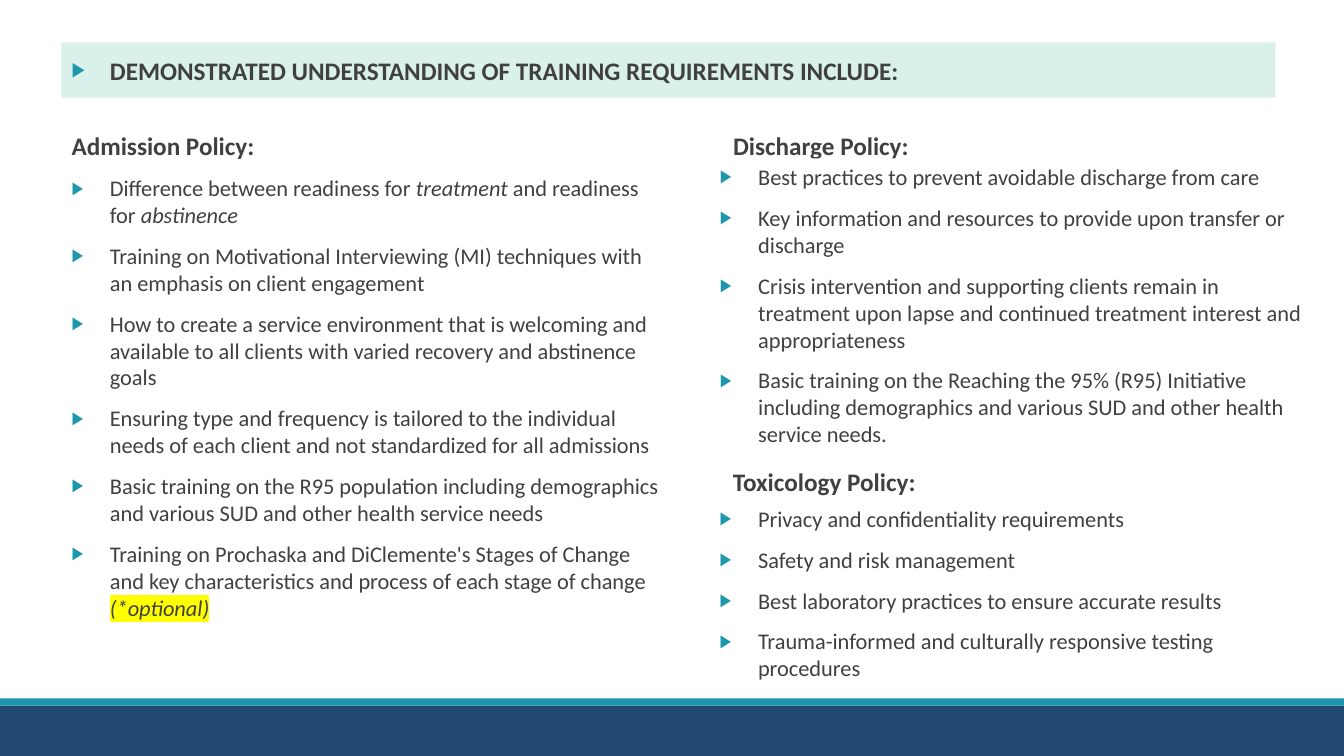
from lxml.etree import SubElement
from pptx import Presentation
from pptx.dml.color import RGBColor
from pptx.enum.shapes import MSO_SHAPE as Preset
from pptx.enum.text import MSO_ANCHOR as Anchor, MSO_AUTO_SIZE as AutoSize, PP_ALIGN as Align
from pptx.oxml.ns import qn
from pptx.util import Inches, Pt

TEXT, TEAL, NAVY, MINT, WHITE, YELLOW = "404040", "1D97AC", "234A70", "D9F1EA", "FFFFFF", "FFFF00"
WIDTH, HEIGHT = 13.33, 7.5
LIST_WIDTH, HEADING_WIDTH, HEADING_HEIGHT = 6.03, 5.74, 0.4

TITLE = "DEMONSTRATED UNDERSTANDING OF TRAINING REQUIREMENTS INCLUDE:"
ADMISSION = [
    [("Difference between readiness for ", ""), ("treatment ", "italic"),
     ("and readiness for ", ""), ("abstinence", "italic")],
    "Training on Motivational Interviewing (MI) techniques with an emphasis on client engagement",
    "How to create a service environment that is welcoming and available to all clients "
    "with varied recovery and abstinence goals",
    "Ensuring type and frequency is tailored to the individual needs of each client "
    "and not standardized for all admissions",
    "Basic training on the R95 population including demographics and various SUD "
    "and other health service needs",
    [("Training on Prochaska and DiClemente's Stages of Change and key characteristics "
      "and process of each stage of change ", ""), ("(*optional)", "italic highlight")],
]
DISCHARGE = [
    "Best practices to prevent avoidable discharge from care",
    "Key information and resources to provide upon transfer or discharge",
    "Crisis intervention and supporting clients remain in treatment upon lapse "
    "and continued treatment interest and appropriateness",
    "Basic training on the Reaching the 95% (R95) Initiative including demographics "
    "and various SUD and other health service needs.",
]
TOXICOLOGY = [
    "Privacy and confidentiality requirements",
    "Safety and risk management",
    "Best laboratory practices to ensure accurate results",
    "Trauma-informed and culturally responsive testing procedures",
]


def color(value):
    """Return the colour for a hex string."""
    return RGBColor.from_string(value)


def paint(shape, value):
    """Fill a shape with one solid colour."""
    shape.fill.solid()
    shape.fill.fore_color.rgb = color(value)


def place(shape, box, anchor=Anchor.TOP):
    """Move a text holder into its box and fix how its text sits."""
    shape.left, shape.top, shape.width, shape.height = map(Inches, box)
    frame = shape.text_frame
    frame.word_wrap = True
    frame.auto_size = AutoSize.NONE
    frame.vertical_anchor = anchor
    return frame


def add_run(paragraph, text, size, style=""):
    """Add a run in the slide's text style."""
    run = paragraph.add_run()
    run.text = text
    font = run.font
    font.name, font.size = "Calibri", Pt(size)
    font.bold, font.italic = "bold" in style, "italic" in style
    font.color.rgb = color(TEXT)
    if "highlight" in style:
        properties = run._r.get_or_add_rPr()
        highlight = SubElement(properties, qn("a:highlight"))
        SubElement(highlight, qn("a:srgbClr"), val=YELLOW)
        properties.find(qn("a:solidFill")).addnext(highlight)


def add_bullet(paragraph):
    """Give a paragraph a hanging teal triangle."""
    properties = paragraph._p.get_or_add_pPr()
    indent = Inches(0.38)
    properties.set("marL", str(indent))
    properties.set("indent", str(-indent))
    SubElement(SubElement(properties, qn("a:buClr")), qn("a:srgbClr"), val=TEAL)
    SubElement(properties, qn("a:buSzPct"), val="80000")
    SubElement(properties, qn("a:buFont"), typeface="Arial")
    SubElement(properties, qn("a:buChar"), char="▶")


def start_paragraph(paragraph, space=0):
    """Set a paragraph flush left with the given space before it."""
    paragraph.alignment = Align.LEFT
    paragraph.space_before = Pt(space)
    return paragraph


def draw_banner(title, box):
    """Set the slide title on its mint band."""
    paint(title, MINT)
    paragraph = start_paragraph(place(title, box, Anchor.MIDDLE).paragraphs[0])
    add_bullet(paragraph)
    add_run(paragraph, TITLE, 18, "bold")


def draw_heading(heading, box, text):
    """Set the name of a policy."""
    add_run(start_paragraph(place(heading, box).paragraphs[0]), text, 18, "bold")


def draw_list(body, box, items):
    """Set the bulleted requirements of a policy."""
    paint(body, WHITE)
    frame = place(body, box)
    for index, item in enumerate(items):
        paragraph = frame.add_paragraph() if index else frame.paragraphs[0]
        start_paragraph(paragraph, 10 if index else 0)
        add_bullet(paragraph)
        for text, style in [(item, "")] if isinstance(item, str) else item:
            add_run(paragraph, text, 16, style)


def draw_policy(holders, box, name, items, outdent=0, drop=0.44):
    """Place a policy's heading and its list below, inside the given box."""
    left, top, width, height = box
    heading, body = holders
    draw_heading(heading, (left + outdent, top, HEADING_WIDTH, HEADING_HEIGHT), name)
    draw_list(body, (left, top + drop, width, height - drop), items)


def draw_footer(slide, box):
    """Draw the navy footer with a teal strip along its top."""
    left, top, width, height = box
    strip = 0.07
    for value, y, depth in ((NAVY, top + strip, height - strip), (TEAL, top, strip)):
        band = slide.shapes.add_shape(Preset.RECTANGLE, *map(Inches, (left, y, width, depth)))
        band.shadow.inherit = False
        paint(band, value)
        band.line.fill.background()


def main():
    """Build the slide and save it."""
    deck = Presentation()
    deck.slide_width, deck.slide_height = Inches(WIDTH), Inches(HEIGHT)
    slide = deck.slides.add_slide(deck.slide_layouts.get_by_name("Comparison"))
    title, *policy_holders = slide.placeholders
    toxicology_holders = [slide.shapes.add_textbox(0, 0, 0, 0) for _ in range(2)]
    draw_footer(slide, (0, 6.93, WIDTH, 0.57))
    draw_banner(title, (0.61, 0.42, 12.04, 0.55))
    draw_policy(policy_holders[:2], (0.61, 1.24, LIST_WIDTH, 5.4), "Admission Policy:", ADMISSION)
    draw_policy(policy_holders[2:], (7.04, 1.24, LIST_WIDTH, 3.01), "Discharge Policy:", DISCHARGE,
                outdent=0.13, drop=0.33)
    draw_policy(toxicology_holders, (7.04, 4.58, LIST_WIDTH, 1.88), "Toxicology Policy:", TOXICOLOGY,
                outdent=0.13, drop=0.38)
    deck.save("out.pptx")


if __name__ == "__main__":
    main()
